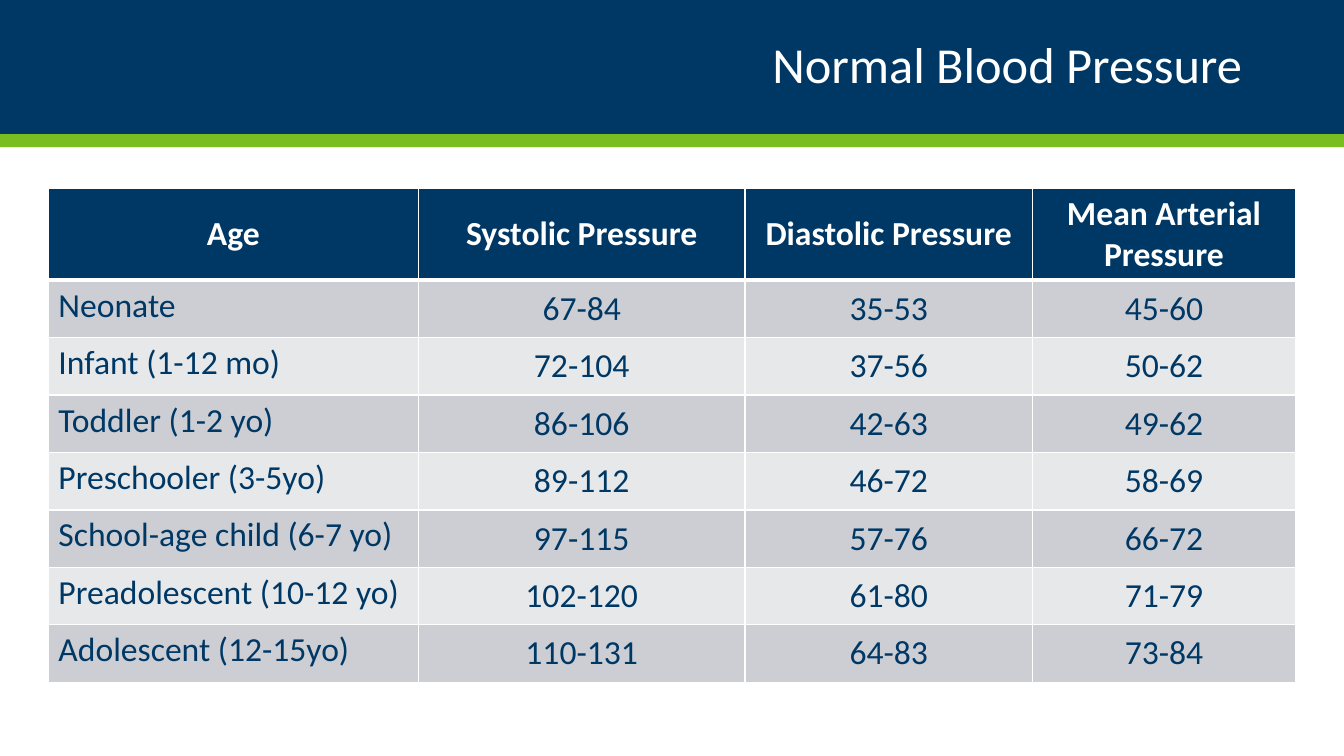
from lxml import etree
from pptx import Presentation
from pptx.dml.color import RGBColor
from pptx.enum.shapes import MSO_SHAPE
from pptx.enum.text import MSO_ANCHOR, PP_ALIGN
from pptx.oxml.ns import qn
from pptx.util import Inches, Pt

RECTANGLE = MSO_SHAPE.RECTANGLE
TOP, MIDDLE = MSO_ANCHOR.TOP, MSO_ANCHOR.MIDDLE
LEFT, CENTER, RIGHT = PP_ALIGN.LEFT, PP_ALIGN.CENTER, PP_ALIGN.RIGHT

SLIDE_WIDTH, SLIDE_HEIGHT = 13.33, 7.5
FONT = "Calibri"
COLORS = {
    "navy": "003865",
    "green": "78BE21",
    "white": "FFFFFF",
    "dark_band": "CCCED3",
    "light_band": "E7E8EA",
}

# Table grid
TABLE_LEFT, TABLE_TOP = 0.48, 1.87
COLUMN_WIDTHS = [3.67, 3.24, 2.85, 2.61]
HEADER_HEIGHT, ROW_HEIGHT = 0.91, 0.57
BORDER, HEADER_RULE = 1, 3

HEADINGS = ["Age", "Systolic Pressure", "Diastolic Pressure", "Mean Arterial Pressure"]
PRESSURES = [
    ["Neonate", "67-84", "35-53", "45-60"],
    ["Infant (1-12 mo)", "72-104", "37-56", "50-62"],
    ["Toddler (1-2 yo)", "86-106", "42-63", "49-62"],
    ["Preschooler (3-5yo)", "89-112", "46-72", "58-69"],
    ["School-age child (6-7 yo)", "97-115", "57-76", "66-72"],
    ["Preadolescent (10-12 yo)", "102-120", "61-80", "71-79"],
    ["Adolescent (12-15yo)", "110-131", "64-83", "73-84"],
]


def rgb(name):
    return RGBColor.from_string(COLORS[name])


def write(frame, text, size, color, align, bold=False):
    frame.text = text
    paragraph = frame.paragraphs[0]
    paragraph.alignment = align
    font = paragraph.runs[0].font
    font.name, font.size, font.bold = FONT, Pt(size), bold
    font.color.rgb = rgb(color)
    return paragraph


def add_band(slide, top, height, color):
    band = slide.shapes.add_shape(
        RECTANGLE, 0, Inches(top), Inches(SLIDE_WIDTH), Inches(height))
    band.shadow.inherit = False
    band.fill.solid()
    band.fill.fore_color.rgb = rgb(color)
    band.line.fill.background()


def add_title(slide, text):
    title = slide.shapes.add_textbox(
        Inches(0.92), Inches(0.17), Inches(11.5), Inches(1))
    frame = title.text_frame
    frame.word_wrap = True
    frame.vertical_anchor = MIDDLE
    write(frame, text, 36, "white", RIGHT).line_spacing = 0.9


def set_borders(cell, top, bottom):
    properties = cell._tc.get_or_add_tcPr()
    widths = {"a:lnL": BORDER, "a:lnR": BORDER, "a:lnT": top, "a:lnB": bottom}
    for side, width in widths.items():
        line = etree.SubElement(properties, qn(side), w=str(Pt(width)))
        fill = etree.SubElement(line, qn("a:solidFill"))
        etree.SubElement(fill, qn("a:srgbClr"), val=COLORS["white"])


def fill_cell(cell, text, row, column):
    is_header = row == 0
    is_age = column == 0 and not is_header
    set_borders(cell, HEADER_RULE if row == 1 else BORDER,
                HEADER_RULE if is_header else BORDER)
    band = "navy" if is_header else ("light_band", "dark_band")[row % 2]
    cell.fill.solid()
    cell.fill.fore_color.rgb = rgb(band)
    cell.vertical_anchor = TOP if is_age else MIDDLE
    write(cell.text_frame, text, 24, "white" if is_header else "navy",
          LEFT if is_age else CENTER, is_header)


def add_pressure_table(slide):
    records = [HEADINGS] + PRESSURES
    heights = [HEADER_HEIGHT] + [ROW_HEIGHT] * len(PRESSURES)
    table = slide.shapes.add_table(
        len(records), len(HEADINGS), Inches(TABLE_LEFT), Inches(TABLE_TOP),
        Inches(sum(COLUMN_WIDTHS)), Inches(sum(heights))).table
    for column, width in zip(table.columns, COLUMN_WIDTHS):
        column.width = Inches(width)
    for row, height in zip(table.rows, heights):
        row.height = Inches(height)
    for r, record in enumerate(records):
        for c, text in enumerate(record):
            fill_cell(table.cell(r, c), text, r, c)


def main():
    deck = Presentation()
    deck.slide_width, deck.slide_height = Inches(SLIDE_WIDTH), Inches(SLIDE_HEIGHT)
    slide = deck.slides.add_slide(deck.slide_layouts[6])

    # Title banner with its accent stripe
    add_band(slide, 0, 1.33, "navy")
    add_band(slide, 1.33, 0.13, "green")
    add_title(slide, "Normal Blood Pressure")

    # Pressure ranges by age
    add_pressure_table(slide)
    deck.save("out.pptx")


if __name__ == "__main__":
    main()
